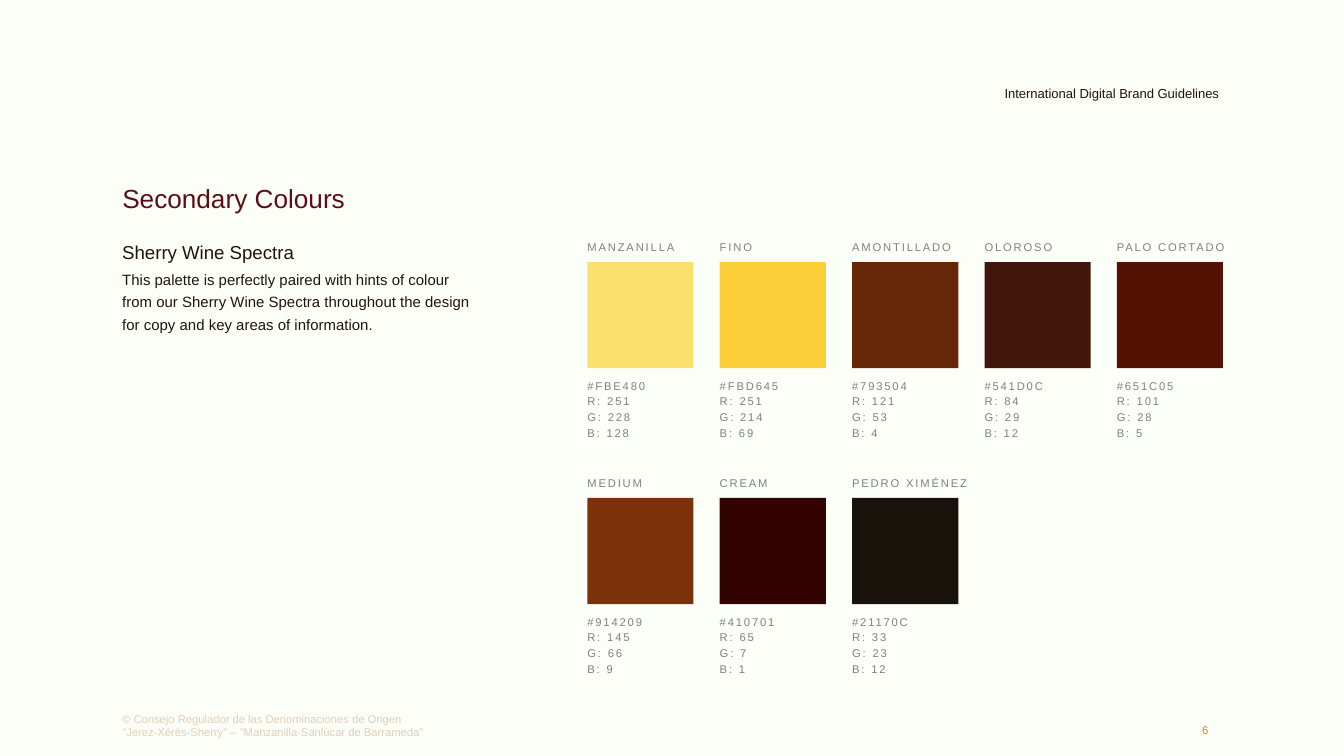
from pptx import Presentation
from pptx import util as u
from pptx.dml.color import RGBColor
from pptx.enum import shapes, text

W, H = 10, 5.625
FONT = "Arial"
SWATCH, LABEL_H, CODE_DROP = 0.79, 0.16, 1.03
WIDE_LABEL, LONG_NAME = 1.1, 11
LABEL = {"size": u.Pt(6), "color": "808080", "spacing": 1}
PALETTE = [
    [("MANZANILLA", "FAE06D", "FBE480"), ("FINO", "FACF38", "FBD645"),
     ("AMONTILLADO", "652705", "793504"), ("OLOROSO", "42160B", "541D0C"),
     ("PALO CORTADO", "521305", "651C05")],
    [("MEDIUM", "7D310A", "914209"), ("CREAM", "320300", "410701"),
     ("PEDRO XIMÉNEZ", "19120B", "21170C")],
]


def rgb(value):
    """Turn a hex string into a colour."""
    return RGBColor.from_string(value)


def inches(*box):
    """Turn a box in inches into slide lengths."""
    return [u.Inches(v) for v in box]


def set_all(obj, values):
    """Set each named attribute on an object."""
    for name, value in values.items():
        setattr(obj, name, value)


def fill_text(sp, lines, margins=(0, 0, 0, 0), anchor=text.MSO_ANCHOR.TOP):
    """Write (text, font, paragraph) lines into a shape."""
    tf = sp.text_frame
    left, top, right, bottom = inches(*margins)
    set_all(tf, {"word_wrap": True, "auto_size": text.MSO_AUTO_SIZE.NONE,
                 "vertical_anchor": anchor, "margin_left": left,
                 "margin_top": top, "margin_right": right,
                 "margin_bottom": bottom})
    for i, (words, font, para) in enumerate(lines):
        p = tf.paragraphs[0] if i == 0 else tf.add_paragraph()
        set_all(p, {"alignment": text.PP_ALIGN.LEFT, **para})
        r = p.add_run()
        r.text = words
        set_all(r.font, {"name": FONT, "size": font["size"]})
        r.font.color.rgb = rgb(font["color"])
        if "spacing" in font:
            r.font._element.set("spc", str(font["spacing"] * 100))


def add_text(slide, box, lines, **frame):
    """Add a text box holding the given lines."""
    fill_text(slide.shapes.add_textbox(*inches(*box)), lines, **frame)


def keep_title_only(layout):
    """Remove every placeholder but the title from a layout or master."""
    for sp in list(layout.placeholders):
        if sp.placeholder_format.idx:
            sp._element.getparent().remove(sp._element)


def add_title(slide, box):
    """Place and format the title placeholder."""
    sp = slide.shapes.title
    set_all(sp, dict(zip(("left", "top", "width", "height"), inches(*box))))
    font = {"size": u.Pt(14), "color": "5C0E17"}
    fill_text(sp, [("Secondary Colours", font, {})],
              anchor=text.MSO_ANCHOR.MIDDLE)


def add_intro(slide, box):
    """Add the subheading and the palette description."""
    body = ("This palette is perfectly paired with hints of colour from our "
            "Sherry Wine Spectra throughout the design for copy and key "
            "areas of information.")
    add_text(slide, box, [
        ("Sherry Wine Spectra", {"size": u.Pt(10), "color": "20140C"}, {}),
        (body, {"size": u.Pt(8), "color": "20140C"},
         {"line_spacing": u.Pt(12), "space_before": u.Pt(1.6)})])


def add_swatch(slide, x, y, name, shade, code):
    """Add one colour square with its name, hex code and RGB values."""
    width = WIDE_LABEL if len(name) > LONG_NAME else SWATCH
    add_text(slide, (x, y, width, LABEL_H), [(name, LABEL, {})])
    sp = slide.shapes.add_shape(shapes.MSO_SHAPE.RECTANGLE,
                                *inches(x, y + LABEL_H, SWATCH, SWATCH))
    sp.shadow.inherit = False
    sp.fill.solid()
    sp.fill.fore_color.rgb = rgb(shade)
    sp.line.fill.background()
    values = [f"#{code}"] + [f"{c}: {v}" for c, v in zip("RGB", rgb(code))]
    add_text(slide, (x, y + CODE_DROP, SWATCH, LABEL_H),
             [(v, LABEL, {"space_before": u.Pt(1.2 if i else 0)})
              for i, v in enumerate(values)])


def add_palette(slide, box):
    """Lay the swatches out on an even grid inside the box."""
    left, top, width, height = box
    col = (width - SWATCH) / (len(PALETTE[0]) - 1)
    row = height / len(PALETTE)
    for i, swatches in enumerate(PALETTE):
        for j, swatch in enumerate(swatches):
            add_swatch(slide, left + j * col, top + i * row, *swatch)


def add_header(slide, box):
    """Add the running document name at the top right."""
    add_text(slide, box, [("International Digital Brand Guidelines",
                           {"size": u.Pt(7), "color": "20150B"},
                           {"alignment": text.PP_ALIGN.RIGHT,
                            "line_spacing": 1.5})],
             margins=(0, 0.05, 0.02, 0))


def add_footer(slide, box):
    """Add the copyright lines and the page number."""
    left, top, width, height = box
    font = {"size": u.Pt(6), "color": "DECFBC"}
    add_text(slide, (left, top, 5.59, height), [
        ("© Consejo Regulador de las Denominaciones de Origen", font, {}),
        ("\"Jerez-Xérès-Sherry\" – \"Manzanilla-Sanlúcar de Barrameda”",
         font, {})], margins=(0, 0.05, 0.1, 0))
    add_text(slide, (left + width - 0.46, top + 0.08, 0.46, 0.29),
             [("6", {"size": u.Pt(6), "color": "D48420"},
               {"alignment": text.PP_ALIGN.RIGHT})],
             margins=(0.1, 0.05, 0.1, 0))


def main():
    """Build the slide and save it."""
    prs = Presentation()
    prs.slide_width, prs.slide_height = inches(W, H)
    layout = prs.slide_layouts[5]
    keep_title_only(layout)
    keep_title_only(prs.slide_master)
    slide = prs.slides.add_slide(layout)
    slide.background.fill.solid()
    slide.background.fill.fore_color.rgb = rgb("FCFFF8")
    margin = 0.91
    content = W - 2 * margin
    add_footer(slide, (margin, 5.25, content, 0.37))
    add_header(slide, (W / 2, 0.53, content / 2, 0.31))
    add_title(slide, (margin, 1.32, 5.59, 0.31))
    add_intro(slide, (margin, 1.79, 2.6, 2.76))
    add_palette(slide, (4.37, 1.79, 4.73, 3.51))
    prs.save("out.pptx")


if __name__ == "__main__":
    main()
